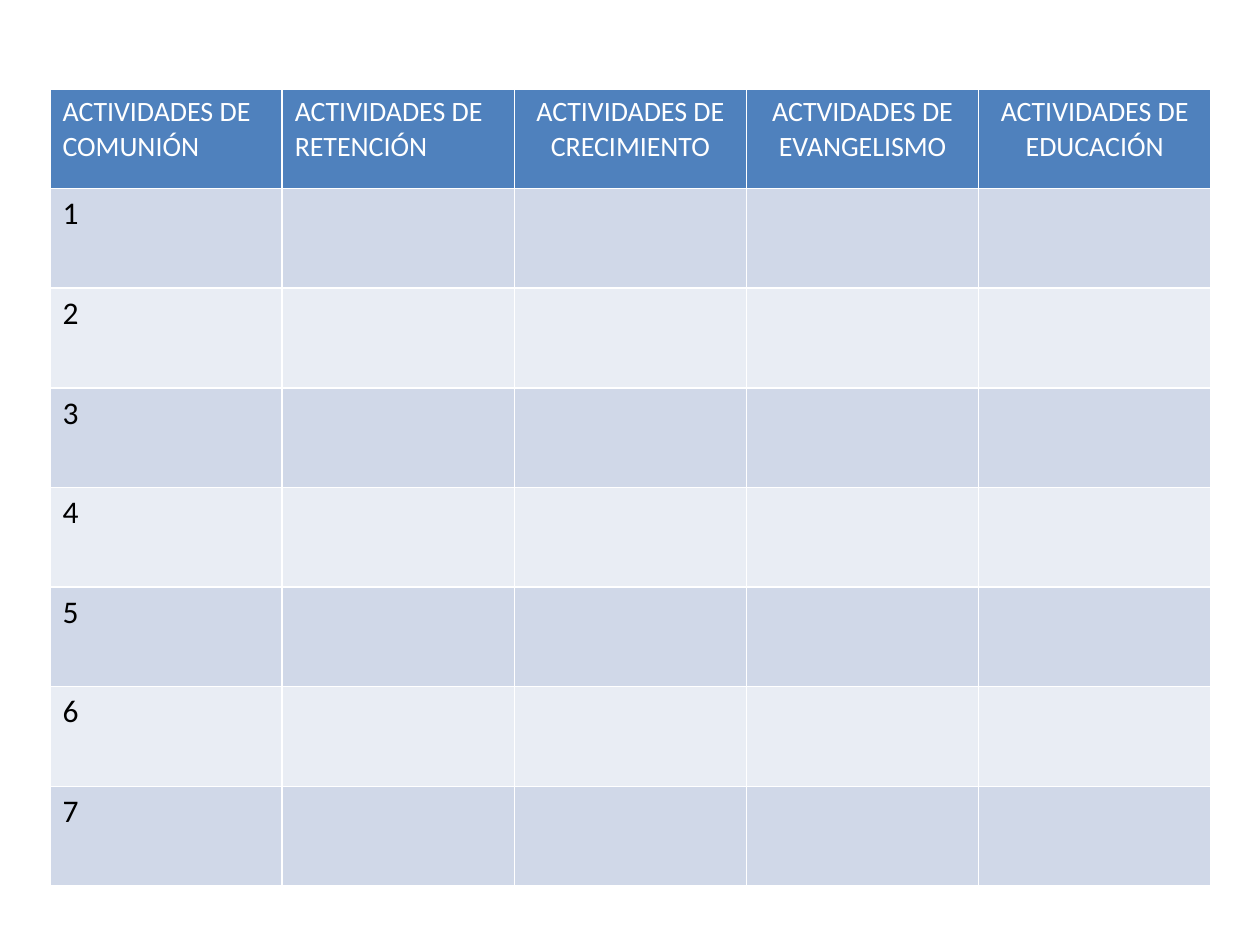
from lxml.etree import SubElement
from pptx import Presentation
from pptx.dml.color import RGBColor
from pptx.enum.text import PP_ALIGN
from pptx.oxml.ns import qn
from pptx.util import Emu, Pt


def px(length):
    return Emu(round(length * 914400 / 126))


def paint(color_format, color):
    color_format.rgb = RGBColor.from_string(color)


presentation = Presentation()
presentation.slide_width = px(1260)
presentation.slide_height = px(945)
slide = presentation.slides.add_slide(presentation.slide_layouts[6])

# Activity table: one header row and seven numbered rows
headers = [
    ("ACTIVIDADES DE COMUNIÓN", PP_ALIGN.LEFT),
    ("ACTIVIDADES DE RETENCIÓN", PP_ALIGN.LEFT),
    ("ACTIVIDADES DE CRECIMIENTO", PP_ALIGN.CENTER),
    ("ACTVIDADES DE EVANGELISMO", PP_ALIGN.CENTER),
    ("ACTIVIDADES DE EDUCACIÓN", PP_ALIGN.CENTER),
]
row_count = 8
table = slide.shapes.add_table(
    row_count, len(headers), px(50), px(89), px(1161), px(797)
).table

for row in range(row_count):
    for column, (header, alignment) in enumerate(headers):
        cell = table.cell(row, column)

        # Thin white borders
        properties = cell._tc.get_or_add_tcPr()
        for side in ("a:lnL", "a:lnR", "a:lnT", "a:lnB"):
            line = SubElement(properties, qn(side), w=str(Pt(1)))
            line_fill = SubElement(line, qn("a:solidFill"))
            SubElement(line_fill, qn("a:srgbClr"), val="FFFFFF")

        # Header and alternating row fills
        if row == 0:
            text, size, text_color, fill_color = header, 16, "FFFFFF", "4F81BD"
        else:
            text = str(row) if column == 0 else ""
            size, text_color = 18, "000000"
            fill_color = "D0D8E8" if row % 2 else "E9EDF4"
        cell.fill.solid()
        paint(cell.fill.fore_color, fill_color)

        # Cell text
        cell.text_frame.text = text
        paragraph = cell.text_frame.paragraphs[0]
        if row == 0:
            paragraph.alignment = alignment
        for run in paragraph.runs:
            run.font.name = "Calibri"
            run.font.size = Pt(size)
            run.font.bold = False
            paint(run.font.color, text_color)

presentation.save("out.pptx")
